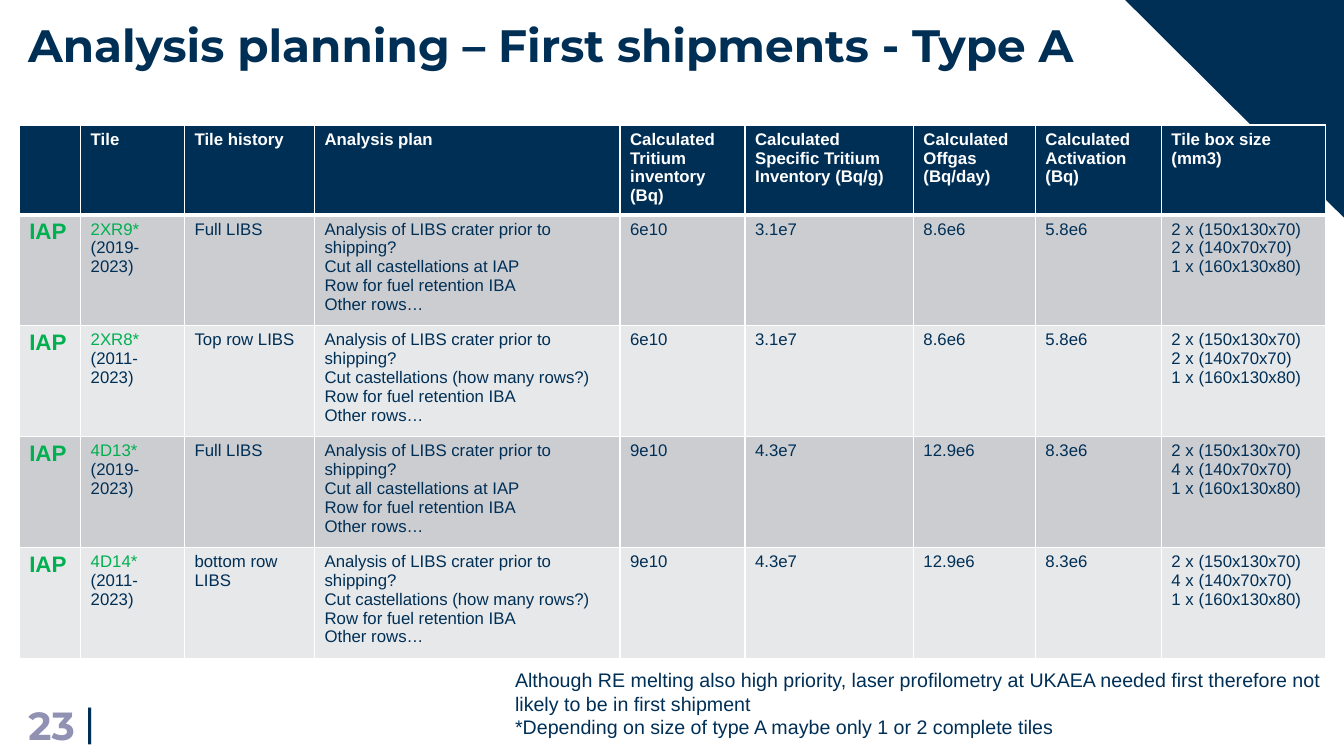
from dataclasses import dataclass

from lxml import etree
from pptx import Presentation
from pptx.dml.color import RGBColor
from pptx.enum import text as txt
from pptx.oxml import ns
from pptx.util import Inches, Pt

INK = {
    "navy": "002F56",
    "white": "FFFFFF",
    "green": "00B050",
    "lilac": "9091B3",
    "dark": "CCCDD1",
    "light": "E7E8E9",
}
HEADS = [
    "", "Tile", "Tile history", "Analysis plan",
    "Calculated Tritium inventory (Bq)",
    "Calculated Specific Tritium Inventory (Bq/g)",
    "Calculated Offgas (Bq/day)", "Calculated Activation (Bq)",
    "Tile box size\n(mm3)",
]
WIDTHS = [0.61, 1.03, 1.29, 3.03, 1.24, 1.67, 1.21, 1.25, 1.63]
HEAD_H, ROW_H = 0.89, 1.1
ALL = "Cut all castellations at IAP"
SOME = "Cut castellations (how many rows?)"
LOW = ("6e10", "3.1e7", "8.6e6", "5.8e6")
HIGH = ("9e10", "4.3e7", "12.9e6", "8.3e6")


@dataclass
class Tile:
    code: str
    years: str
    past: str
    cut: str
    levels: tuple[str, ...]
    boxes: int

    def cells(self) -> list[str]:
        plan = ("Analysis of LIBS crater prior to shipping?\n"
                f"{self.cut}\nRow for fuel retention IBA\nOther rows…")
        sizes = f"2 x (150x130x70)\n{self.boxes} x (140x70x70)\n1 x (160x130x80)"
        return ["IAP", f"{self.code}* ", self.past, plan, *self.levels, sizes]


@dataclass
class Label:
    words: str
    box: tuple[float, float, float, float]
    size: float
    font: str = "Arial"
    tint: str = "navy"
    bold: bool = False
    right: bool = False
    mid: bool = False
    tight: bool = False


TILES = [
    Tile("2XR9", "(2019-2023)", "Full LIBS", ALL, LOW, 2),
    Tile("2XR8", "(2011-2023)", "Top row LIBS", SOME, LOW, 2),
    Tile("4D13", "(2019-2023)", "Full LIBS", ALL, HIGH, 4),
    Tile("4D14", "(2011-2023)", "bottom row LIBS", SOME, HIGH, 4),
]
LABELS = [
    Label("|", (0.84, 6.95, 0.1, 0.4), 28, mid=True, tight=True),
    Label("Analysis planning – First shipments - Type A",
          (0.18, 0.12, 11.65, 0.6), 32.4, "Montserrat", bold=True),
    Label("23", (0.11, 6.99, 0.73, 0.4), 28, "Montserrat", "lilac",
          bold=True, right=True, mid=True),
    Label("Although RE melting also high priority, laser profilometry at UKAEA "
          "needed first therefore not likely to be in first shipment\n"
          "*Depending on size of type A maybe only 1 or 2 complete tiles",
          (5.01, 6.58, 8.21, 0.81), 14),
]


def rgb(name: str) -> RGBColor:
    return RGBColor.from_string(INK[name])


def style(run, size: float, tint: str, bold: bool, font: str = "Arial") -> None:
    run.font.name = font
    run.font.size = Pt(size)
    run.font.bold = bold
    run.font.color.rgb = rgb(tint)


def write(slide, label: Label) -> None:
    frame = slide.shapes.add_textbox(*map(Inches, label.box)).text_frame
    frame.word_wrap = not label.tight
    if label.tight:
        frame.margin_left = frame.margin_right = 0
    if label.mid:
        frame.vertical_anchor = txt.MSO_ANCHOR.MIDDLE
    frame.text = label.words
    for para in frame.paragraphs:
        if label.right:
            para.alignment = txt.PP_ALIGN.RIGHT
        for run in para.runs:
            style(run, label.size, label.tint, label.bold, label.font)


def edge(cell, side: str, points: int) -> None:
    """Add one white border line to a cell."""
    props = cell._tc.get_or_add_tcPr()
    line = etree.SubElement(props, ns.qn(f"a:ln{side}"), w=str(Pt(points)))
    fill = etree.SubElement(line, ns.qn("a:solidFill"))
    etree.SubElement(fill, ns.qn("a:srgbClr"), val=INK["white"])


def fill_cell(cell, words: str, back: str, size: float, tint: str,
              bold: bool, top: int, base: int) -> None:
    for side, points in zip("LRTB", (1, 1, top, base)):
        edge(cell, side, points)
    cell.fill.solid()
    cell.fill.fore_color.rgb = rgb(back)
    cell.text_frame.text = words
    for para in cell.text_frame.paragraphs:
        for run in para.runs:
            style(run, size, tint, bold)


def draw_table(slide) -> None:
    high = HEAD_H + ROW_H * len(TILES)
    table = slide.shapes.add_table(
        len(TILES) + 1, len(HEADS), Inches(0.19), Inches(1.24),
        Inches(sum(WIDTHS)), Inches(high)).table
    for col, width in zip(table.columns, WIDTHS):
        col.width = Inches(width)
    table.rows[0].height = Inches(HEAD_H)
    for col, head in enumerate(HEADS):
        fill_cell(table.cell(0, col), head, "navy", 12, "white", True, 1, 3)
    for row, tile in enumerate(TILES, 1):
        table.rows[row].height = Inches(ROW_H)
        back = "dark" if row % 2 else "light"
        top = 3 if row == 1 else 1
        for col, words in enumerate(tile.cells()):
            site = col == 0
            fill_cell(table.cell(row, col), words, back, 16 if site else 12,
                      "green" if col < 2 else "navy", site, top, 1)
        years = table.cell(row, 1).text_frame.paragraphs[0].add_run()
        years.text = tile.years
        style(years, 12, "navy", False)


def draw_corner(slide) -> None:
    pen = slide.shapes.build_freeform(Inches(11.16), 0)
    pen.add_line_segments([(Inches(13.33), 0), (Inches(13.33), Inches(2.16))])
    corner = pen.convert_to_shape()
    corner.shadow.inherit = False
    corner.fill.solid()
    corner.fill.fore_color.rgb = rgb("navy")
    corner.line.fill.background()


def main() -> None:
    deck = Presentation()
    deck.slide_width, deck.slide_height = Inches(13.33), Inches(7.5)
    slide = deck.slides.add_slide(deck.slide_layouts[6])
    draw_corner(slide)
    draw_table(slide)
    for label in LABELS:
        write(slide, label)
    deck.save("out.pptx")


if __name__ == "__main__":
    main()
